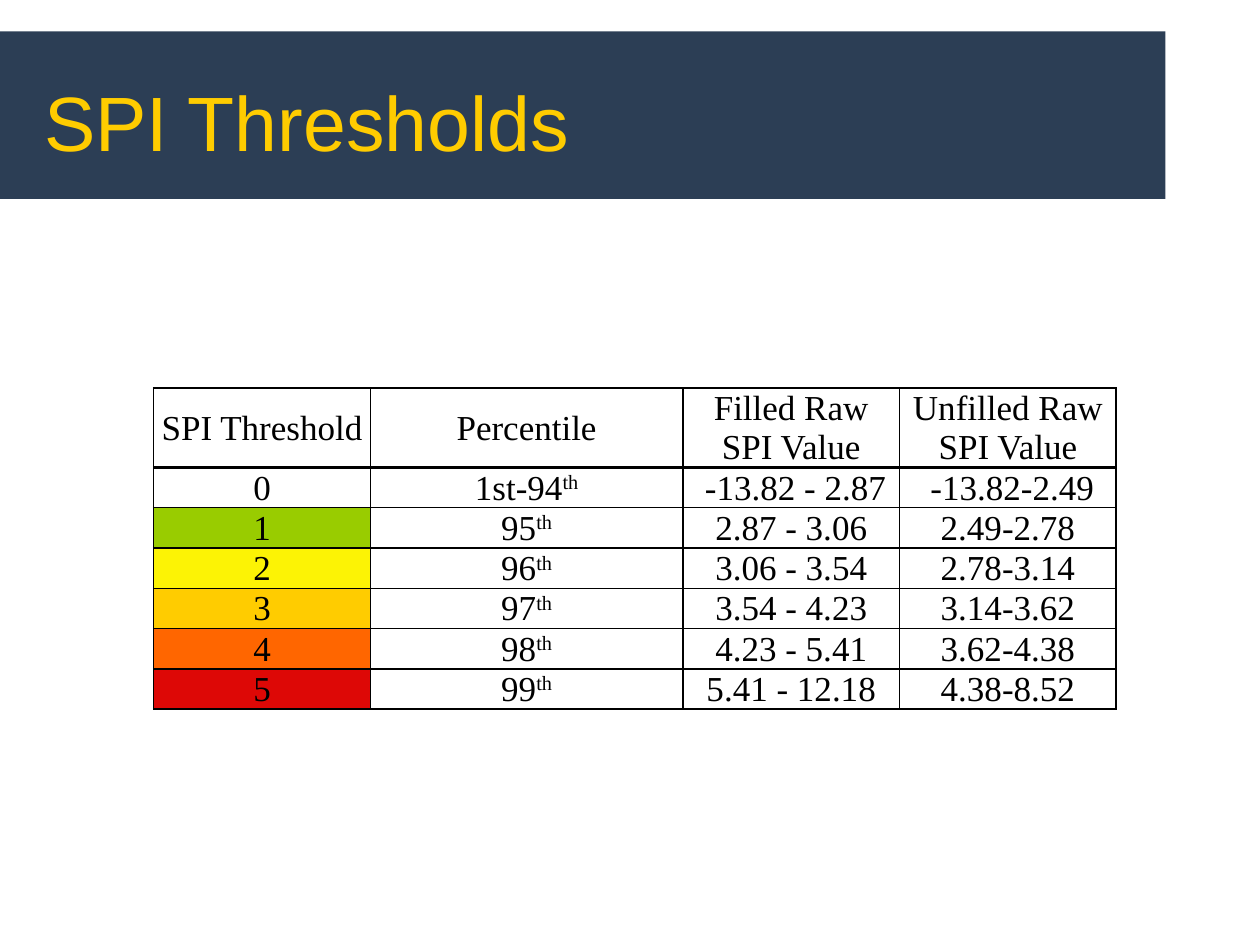
from lxml.etree import SubElement
from pptx import Presentation
from pptx.dml.color import RGBColor
from pptx.enum.shapes import MSO_SHAPE
from pptx.enum.text import MSO_ANCHOR, PP_ALIGN
from pptx.oxml import parse_xml
from pptx.oxml.ns import nsdecls, qn
from pptx.util import Inches, Pt

# Content
TITLE = "SPI Thresholds"
HEADS = ["SPI Threshold", "Percentile", "Filled Raw SPI Value", "Unfilled Raw SPI Value"]
ROWS = [  # threshold, percentile, filled, unfilled, key colour
    ("0", "1st-94", " -13.82 - 2.87", " -13.82-2.49", "FFFFFF"),
    ("1", "95", "2.87 - 3.06", "2.49-2.78", "99CC00"),
    ("2", "96", "3.06 - 3.54", "2.78-3.14", "FCF305"),
    ("3", "97", "3.54 - 4.23", "3.14-3.62", "FFCC00"),
    ("4", "98", "4.23 - 5.41", "3.62-4.38", "FF6600"),
    ("5", "99", "5.41 - 12.18", "4.38-8.52", "DD0806"),
]
WIDTHS = [1.72, 2.48, 1.72, 1.72]
HEAD_H, ROW_H = 0.63, 0.32
THEME = {
    "band": "0F243E", "alpha": 88, "title": "FFCC00", "ink": "000000", "paper": "FFFFFF",
    "head_font": "Arial", "body_font": "Times New Roman", "head_size": 44, "body_size": 20,
}


def color(key):
    return RGBColor.from_string(THEME[key])


def add_run(para, text, face, size, key):
    run = para.add_run()
    run.text = text
    run.font.name = THEME[face]
    run.font.size = Pt(THEME[size])
    run.font.color.rgb = color(key)
    return run


def set_edges(cell, top, base):
    props = cell._tc.get_or_add_tcPr()
    for pos, (side, width) in enumerate(zip("LRTB", (1, 1, top, base))):
        props.insert(pos, parse_xml(
            f'<a:ln{side} {nsdecls("a")} w="{Pt(width)}"><a:solidFill>'
            f'<a:srgbClr val="{THEME["ink"]}"/></a:solidFill></a:ln{side}>'))


def fill_cell(cell, text, paint, top=1, base=1, ordinal=False):
    cell.margin_left = cell.margin_right = cell.margin_top = Inches(0.01)
    cell.margin_bottom = 0
    cell.vertical_anchor = MSO_ANCHOR.MIDDLE
    cell.fill.solid()
    cell.fill.fore_color.rgb = RGBColor.from_string(paint)
    set_edges(cell, top, base)
    para = cell.text_frame.paragraphs[0]
    para.alignment = PP_ALIGN.CENTER
    add_run(para, text, "body_font", "body_size", "ink")
    if ordinal:
        run = add_run(para, "th", "body_font", "body_size", "ink")
        run.font._element.set("baseline", "30000")


def add_band(slide):
    band = slide.shapes.add_shape(
        MSO_SHAPE.RECTANGLE, 0, Inches(0.25), Inches(9.25), Inches(1.33))
    band.shadow.inherit = False
    band.fill.solid()
    band.fill.fore_color.rgb = color("band")
    band.line.fill.background()
    tone = band._element.spPr.find(qn("a:solidFill"))[0]
    SubElement(tone, qn("a:alpha")).set("val", str(THEME["alpha"] * 1000))
    slide.shapes._spTree.insert(2, band._element)  # behind the title


def add_title(slide):
    title = slide.shapes.title
    title.left, title.top = Inches(0.25), Inches(0.33)
    title.width, title.height = Inches(9), Inches(1.25)
    frame = title.text_frame
    frame.word_wrap = True
    frame.vertical_anchor = MSO_ANCHOR.MIDDLE
    para = frame.paragraphs[0]
    para.alignment = PP_ALIGN.LEFT
    add_run(para, TITLE, "head_font", "head_size", "title")


def add_grid(slide):
    high = HEAD_H + ROW_H * len(ROWS)
    grid = slide.shapes.add_table(
        len(ROWS) + 1, len(HEADS), Inches(1.22), Inches(3.08),
        Inches(sum(WIDTHS)), Inches(high)).table
    grid.first_row = grid.horz_banding = False
    for col, width in zip(grid.columns, WIDTHS):
        col.width = Inches(width)
    for num, row in enumerate(grid.rows):
        row.height = Inches(ROW_H if num else HEAD_H)

    # Header row, with a heavier rule below
    for col, text in enumerate(HEADS):
        fill_cell(grid.cell(0, col), text, THEME["paper"], base=2)

    # Threshold rows, keyed by colour in the first column
    for num, (*texts, key) in enumerate(ROWS, 1):
        for col, text in enumerate(texts):
            fill_cell(grid.cell(num, col), text, THEME["paper"] if col else key,
                      top=2 if num == 1 else 1, ordinal=col == 1)


def main():
    deck = Presentation()
    deck.slide_width, deck.slide_height = Inches(10), Inches(7.5)
    slide = deck.slides.add_slide(deck.slide_layouts[5])
    add_band(slide)
    add_title(slide)
    add_grid(slide)
    deck.save("out.pptx")


if __name__ == "__main__":
    main()
